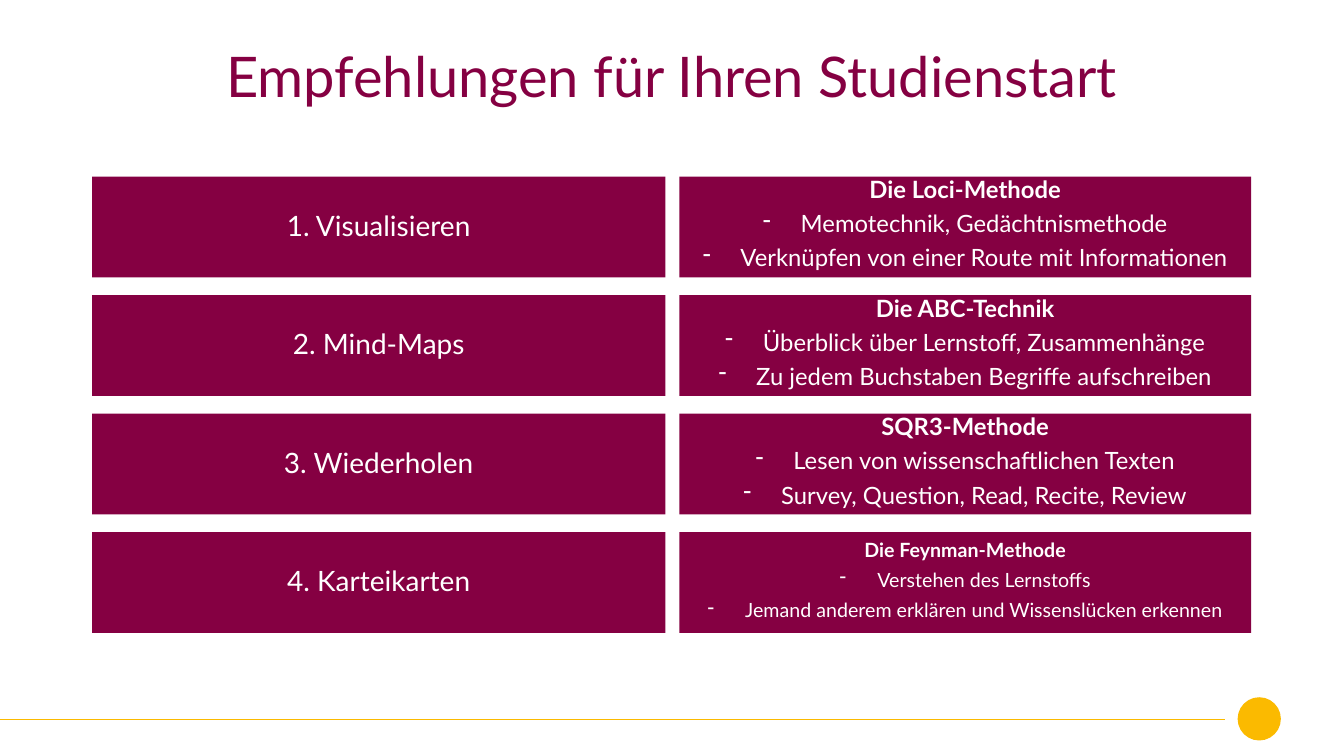
from dataclasses import dataclass

from lxml import etree
from pptx import Presentation
from pptx.dml.color import RGBColor
from pptx.enum.shapes import MSO_CONNECTOR, MSO_SHAPE
from pptx.enum.text import MSO_ANCHOR, MSO_AUTO_SIZE, PP_ALIGN
from pptx.oxml.ns import qn
from pptx.util import Cm, Pt

STRAIGHT = MSO_CONNECTOR.STRAIGHT
RECTANGLE, OVAL = MSO_SHAPE.RECTANGLE, MSO_SHAPE.OVAL
TOP, MIDDLE = MSO_ANCHOR.TOP, MSO_ANCHOR.MIDDLE
CENTER = PP_ALIGN.CENTER
NO_AUTOFIT = MSO_AUTO_SIZE.NONE


@dataclass(frozen=True)
class Theme:
    """Colours and type sizes of the deck."""
    font: str = "Lato"
    wine: RGBColor = RGBColor(0x85, 0x00, 0x42)
    gold: RGBColor = RGBColor(0xFB, 0xBA, 0x00)
    white: RGBColor = RGBColor(0xFF, 0xFF, 0xFF)
    title: Pt = Pt(40)
    topic: Pt = Pt(20)
    method: Pt = Pt(17)
    small: Pt = Pt(14)


THEME = Theme()
TITLE = "Empfehlungen für Ihren Studienstart"
ROWS = [
    ("1. Visualisieren", THEME.method,
     ["Die Loci-Methode", "Memotechnik, Gedächtnismethode",
      "Verknüpfen von einer Route mit Informationen"]),
    ("2. Mind-Maps", THEME.method,
     ["Die ABC-Technik", "Überblick über Lernstoff, Zusammenhänge",
      "Zu jedem Buchstaben Begriffe aufschreiben"]),
    ("3. Wiederholen", THEME.method,
     ["SQR3-Methode", "Lesen von wissenschaftlichen Texten",
      "Survey, Question, Read, Recite, Review"]),
    ("4. Karteikarten", THEME.small,
     ["Die Feynman-Methode", "Verstehen des Lernstoffs",
      "Jemand anderem erklären und Wissenslücken erkennen"]),
]


def set_format(target, **values):
    """Set each named attribute on the target."""
    for name, value in values.items():
        setattr(target, name, value)


def add_dash(para):
    """Give a paragraph a hanging dash bullet."""
    properties = para._p.get_or_add_pPr()
    properties.set("marL", str(Cm(0.95)))
    properties.set("indent", str(-Cm(0.95)))
    etree.SubElement(properties, qn("a:buChar")).set("char", "-")


def write_para(para, text, size, color, spacing, bold=False, dash=False):
    """Write one centred paragraph."""
    if dash:
        add_dash(para)
    set_format(para, text=text, alignment=CENTER, line_spacing=spacing)
    set_format(para.font, name=THEME.font, size=size, bold=bold)
    para.font.color.rgb = color


def add_filled(page, kind, color, left, top, width, height):
    """Add a plain shape with a fill and no outline."""
    shape = page.shapes.add_shape(kind, left, top, width, height)
    shape.shadow.inherit = False
    shape.fill.solid()
    shape.fill.fore_color.rgb = color
    shape.line.fill.background()
    return shape


def add_title(page, left, top, width, height):
    """Place and format the title placeholder."""
    title = page.shapes.title
    set_format(title, left=left, top=top, width=width, height=height)
    set_format(title.text_frame, vertical_anchor=TOP, word_wrap=True,
               auto_size=NO_AUTOFIT)
    write_para(title.text_frame.paragraphs[0], TITLE, THEME.title, THEME.wine, 0.9)


def add_topic(page, text, left, top, width, height):
    """Add the numbered topic box of a row."""
    box = add_filled(page, RECTANGLE, THEME.wine, left, top, width, height)
    set_format(box.text_frame, vertical_anchor=MIDDLE, word_wrap=True)
    write_para(box.text_frame.paragraphs[0], text, THEME.topic, THEME.white, 0.9)


def add_method(page, lines, size, left, top, width, height):
    """Add the method box of a row, a bold heading over dashed points."""
    box = add_filled(page, RECTANGLE, THEME.wine, left, top, width, height)
    frame = box.text_frame
    set_format(frame, vertical_anchor=MIDDLE, word_wrap=True)
    for index, line in enumerate(lines):
        para = frame.add_paragraph() if index else frame.paragraphs[0]
        write_para(para, line, size, THEME.white, 0.7,
                   bold=index == 0, dash=index > 0)
        if index:
            para.space_before = Pt(10)


def add_rows(page, left, top, width, height):
    """Stack the topic and method boxes evenly in the given box."""
    row_height, gap = Cm(2.54), Cm(0.35)
    topic_width = Cm(14.45)
    method_left = left + topic_width + gap
    pitch = (height - row_height) // (len(ROWS) - 1)
    for index, (topic, size, lines) in enumerate(ROWS):
        row_top = top + index * pitch
        add_topic(page, topic, left, row_top, topic_width, row_height)
        add_method(page, lines, size, method_left, row_top,
                   left + width - method_left, row_height)


def add_footer(page, left, top, width, height):
    """Add the thin rule and the dot at its right end."""
    middle = top + height // 2
    dot_left = left + width - height
    rule = page.shapes.add_connector(STRAIGHT, left, middle,
                                     dot_left - Cm(0.33), middle)
    rule.line.color.rgb = THEME.gold
    rule.line.width = Pt(0.5)
    etree.SubElement(rule._element.spPr, qn("a:effectLst"))
    add_filled(page, OVAL, THEME.gold, dot_left, top, height, height)


def main():
    """Build and save the deck."""
    deck = Presentation()
    set_format(deck, slide_width=Cm(33.87), slide_height=Cm(19.05))
    page = deck.slides.add_slide(deck.slide_layouts[5])
    add_footer(page, Cm(0), Cm(17.57), Cm(32.28), Cm(1.09))
    add_title(page, Cm(2.32), Cm(1.12), Cm(29.21), Cm(2.54))
    add_rows(page, Cm(2.32), Cm(4.45), Cm(29.21), Cm(11.5))
    deck.save("out.pptx")


if __name__ == "__main__":
    main()
